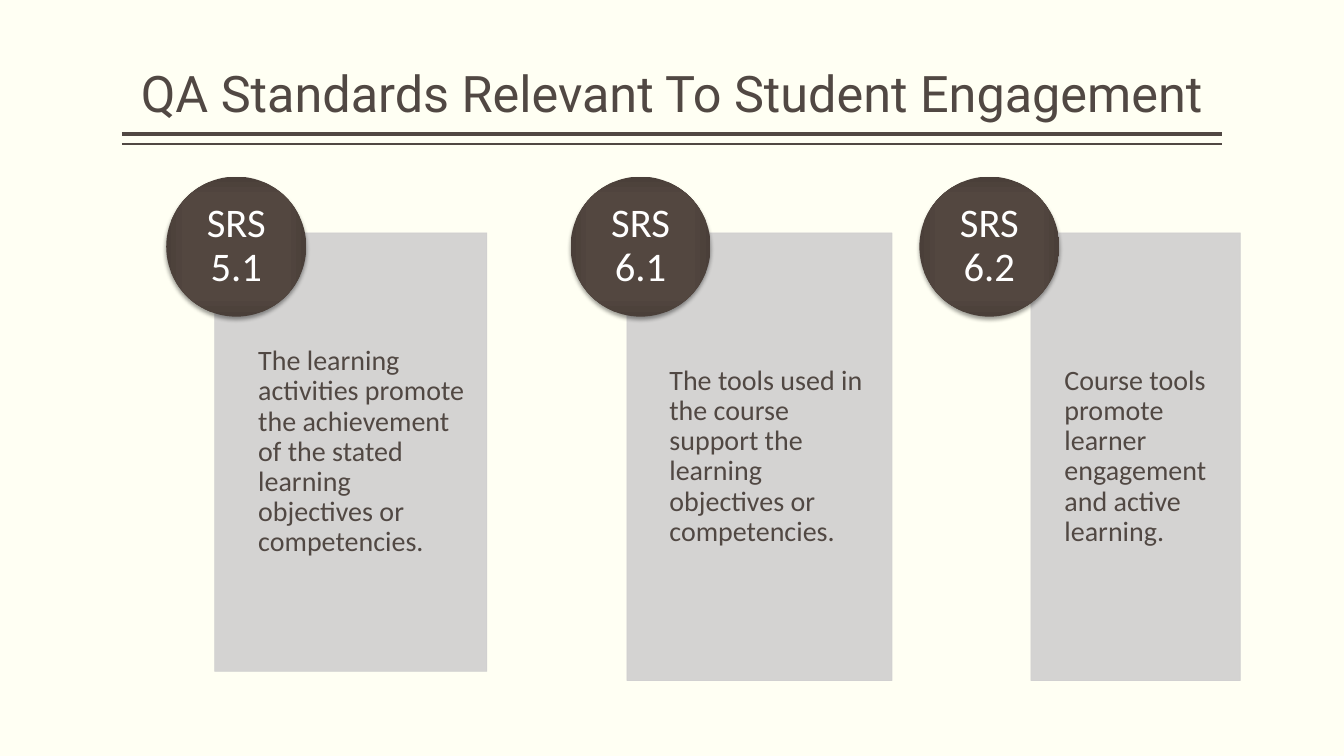
from math import sqrt

from pptx import Presentation
from pptx.dml.color import RGBColor
from pptx.enum.shapes import MSO_CONNECTOR, MSO_SHAPE
from pptx.enum.text import MSO_ANCHOR, PP_ALIGN
from pptx.oxml import parse_xml
from pptx.oxml.ns import nsdecls, qn
from pptx.util import Cm, Pt

STRAIGHT = MSO_CONNECTOR.STRAIGHT
RECTANGLE, OVAL = MSO_SHAPE.RECTANGLE, MSO_SHAPE.OVAL
MIDDLE, BOTTOM = MSO_ANCHOR.MIDDLE, MSO_ANCHOR.BOTTOM
LEFT, CENTER = PP_ALIGN.LEFT, PP_ALIGN.CENTER

COLORS = {
    "page": "FFFFF3",
    "ink": "514843",
    "panel": "D0CFCF",
    "label": "FFFFFF",
    "shadow": "000000",
}
BADGE_STOPS = [(0, "544740"), (71, "534740"), (100, "4A3F39")]

PANEL_TOP = 5.87
PANEL_INDENT = 0.16  # share of the panel width left free before its text
PANEL_PADDING = 0.41
BADGE_TOP, BADGE_SIZE = 4.45, 3.53

# label, badge left, panel left, panel width, panel height, text
STANDARDS = [
    ("SRS 5.1", 4.19, 5.41, 6.86, 11.05,
     "The learning activities promote the achievement of the stated "
     "learning objectives or competencies."),
    ("SRS 6.1", 14.38, 15.8, 6.68, 11.28,
     "The tools used in the course support the learning objectives "
     "or competencies."),
    ("SRS 6.2", 23.17, 25.98, 5.28, 11.28,
     "Course tools promote learner engagement and active learning."),
]


def rgb(name):
    return RGBColor.from_string(COLORS[name])


class SlideBuilder:
    """Holds the text style and the slide being drawn."""

    def __init__(self, page, font="Calibri", line_spacing=0.9):
        self.page = page
        self.font = font
        self.line_spacing = line_spacing
        page.background.fill.solid()
        page.background.fill.fore_color.rgb = rgb("page")

    def text(self, words, left, top, width, height, size, color="ink",
             font=None, align=LEFT, anchor=MIDDLE, insets=(0, 0, 0, 0)):
        box = self.page.shapes.add_textbox(
            Cm(left), Cm(top), Cm(width), Cm(height))
        frame = box.text_frame
        frame.word_wrap = True
        frame.vertical_anchor = anchor
        (frame.margin_left, frame.margin_top,
         frame.margin_right, frame.margin_bottom) = map(Cm, insets)
        para = frame.paragraphs[0]
        para.alignment = align
        para.line_spacing = self.line_spacing
        span = para.add_run()
        span.text = words
        span.font.name = font or self.font
        span.font.size = Pt(size)
        span.font.color.rgb = rgb(color)

    def rule(self, left, right, y, weight):
        line = self.page.shapes.add_connector(
            STRAIGHT, Cm(left), Cm(y), Cm(right), Cm(y))
        line.line.color.rgb = rgb("ink")
        line.line.width = Pt(weight)
        line._element.spPr.append(
            parse_xml(f'<a:effectLst {nsdecls("a")}/>'))

    def panel(self, words, left, width, height):
        panel = self.page.shapes.add_shape(
            RECTANGLE, Cm(left), Cm(PANEL_TOP), Cm(width), Cm(height))
        panel.shadow.inherit = False
        panel.fill.solid()
        panel.fill.fore_color.rgb = rgb("panel")
        panel.line.color.rgb = rgb("panel")
        panel.line.width = Pt(0.5)
        for color in panel._element.spPr.iter(qn("a:srgbClr")):
            color.append(parse_xml(f'<a:alpha {nsdecls("a")} val="90000"/>'))
        indent = width * PANEL_INDENT
        self.text(words, left + indent, PANEL_TOP, width - indent, height, 20,
                  insets=(0, PANEL_PADDING, PANEL_PADDING, PANEL_PADDING))

    def badge(self, label, left):
        badge = self.page.shapes.add_shape(
            OVAL, Cm(left), Cm(BADGE_TOP), Cm(BADGE_SIZE), Cm(BADGE_SIZE))
        badge.line.fill.background()
        badge.shadow.inherit = False
        badge.fill.background()
        properties = badge._element.spPr
        stops = "".join(
            f'<a:gs pos="{position * 1000}"><a:srgbClr val="{color}"/></a:gs>'
            for position, color in BADGE_STOPS)
        properties.replace(properties.find(qn("a:noFill")), parse_xml(
            f'<a:gradFill {nsdecls("a")} rotWithShape="1">'
            f'<a:gsLst>{stops}</a:gsLst><a:path path="rect">'
            '<a:fillToRect l="50000" t="50000" r="50000" b="50000"/>'
            '</a:path></a:gradFill>'))
        properties.find(qn("a:effectLst")).append(parse_xml(
            f'<a:outerShdw {nsdecls("a")} blurRad="{Pt(3.1)}" '
            f'dist="{Pt(2)}" dir="5400000" rotWithShape="0">'
            f'<a:srgbClr val="{COLORS["shadow"]}"><a:alpha val="38000"/>'
            '</a:srgbClr></a:outerShdw>'))
        # The label fills the square inscribed in the circle
        side = BADGE_SIZE / sqrt(2)
        margin = (BADGE_SIZE - side) / 2
        self.text(label, left + margin, BADGE_TOP + margin, side, side, 29,
                  color="label", align=CENTER)


def main():
    deck = Presentation()
    deck.slide_width, deck.slide_height = Cm(33.87), Cm(19.05)
    builder = SlideBuilder(deck.slides.add_slide(deck.slide_layouts[6]))

    # Title with its double rule
    builder.rule(3.07, 30.8, 3.38, 3)
    builder.rule(3.07, 30.8, 3.63, 1)
    builder.text("QA Standards Relevant To Student Engagement",
                 3.07, 0.2, 27.73, 3.05, 36, font="Roboto",
                 align=CENTER, anchor=BOTTOM, insets=(0, 0.13, 0, 0.13))

    # One panel and badge per standard
    for label, badge_left, left, width, height, words in STANDARDS:
        builder.panel(words, left, width, height)
        builder.badge(label, badge_left)

    deck.save("out.pptx")


if __name__ == "__main__":
    main()
